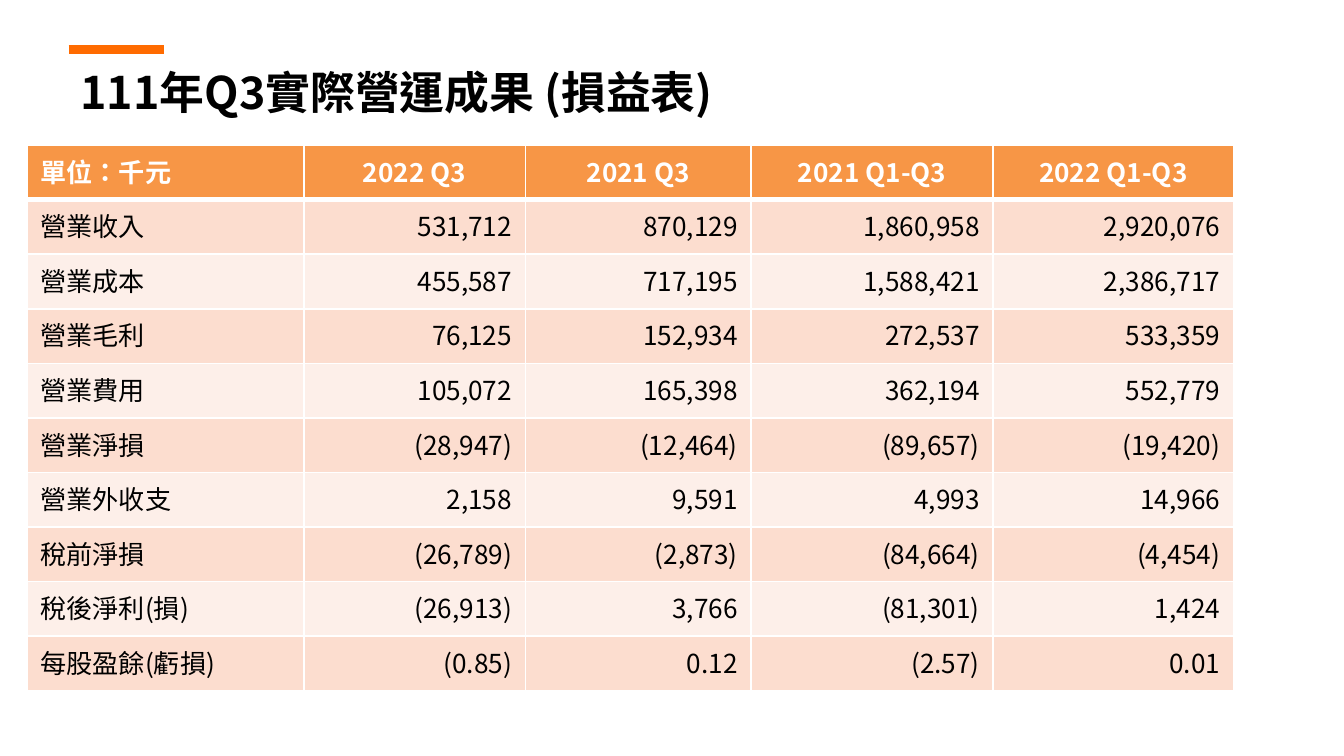
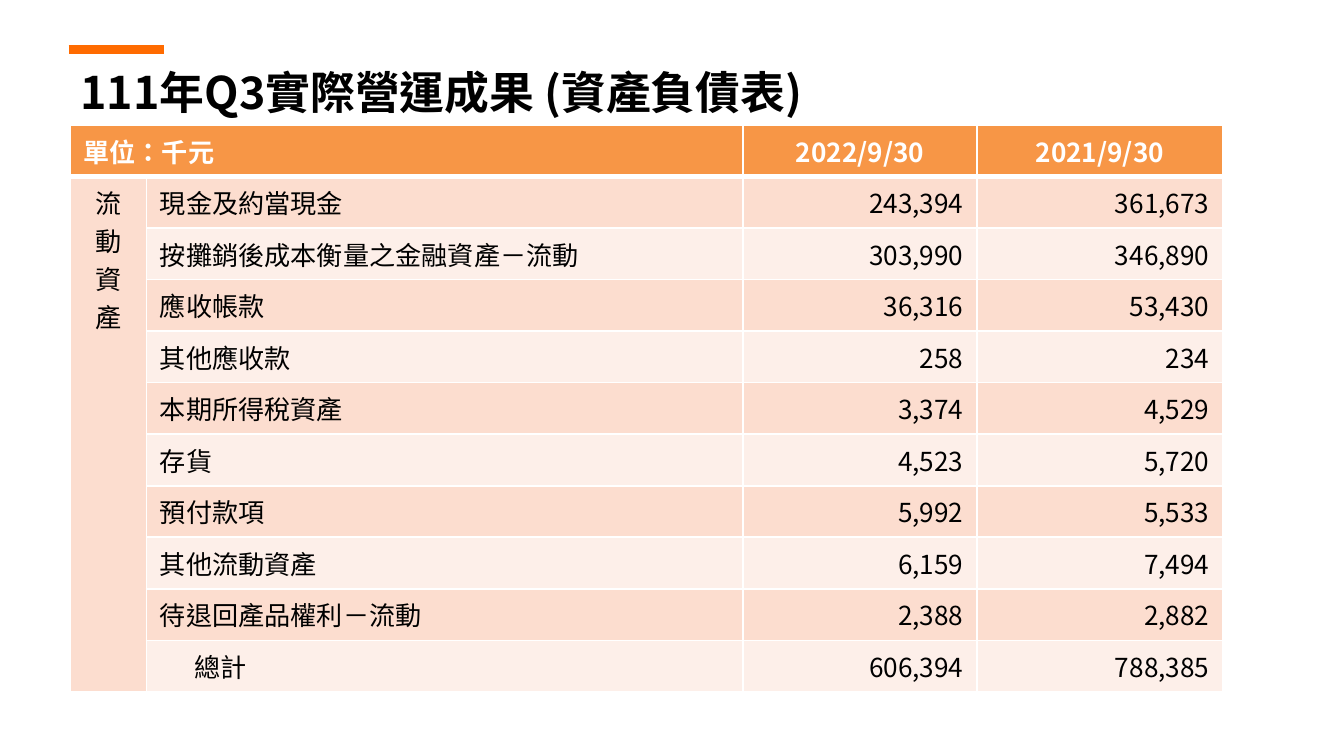
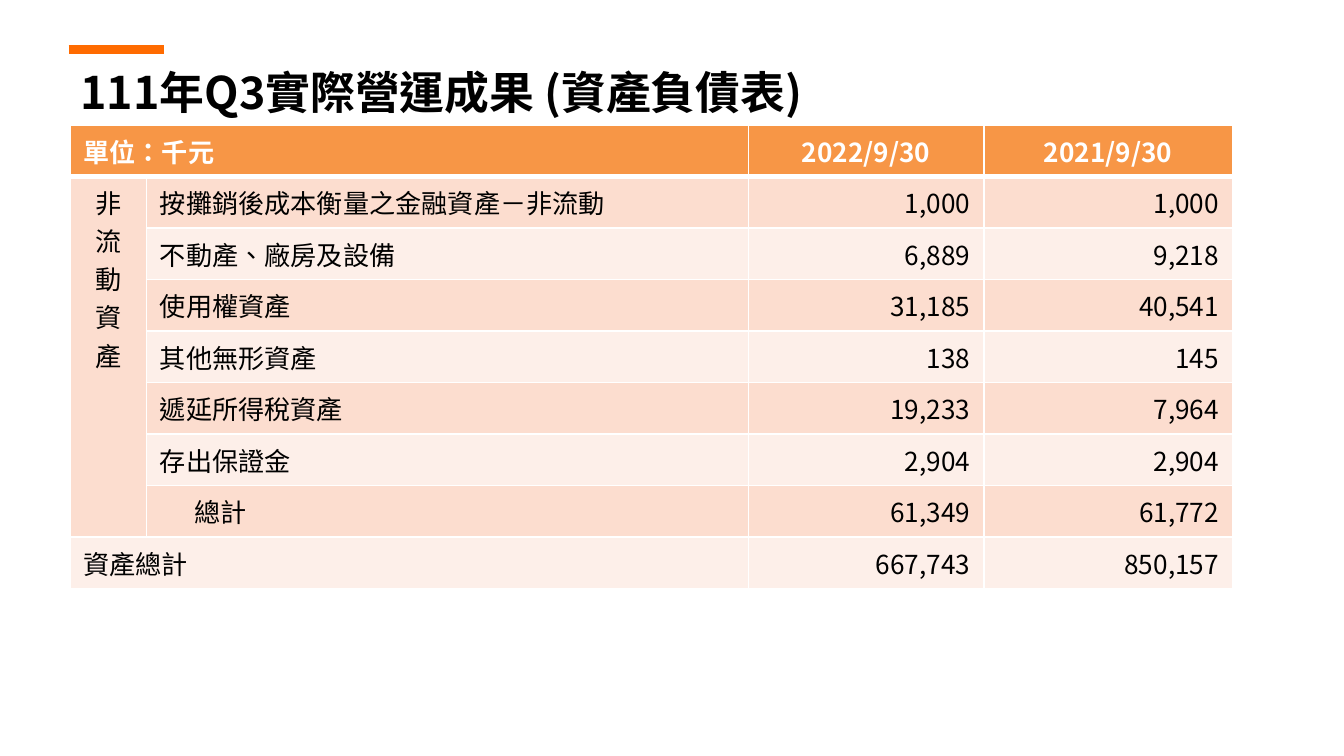
import pptx
import pptx.dml.color
import pptx.enum.shapes
import pptx.enum.text
import pptx.oxml.ns
import pptx.util
from lxml import etree

Inches = pptx.util.Inches
Pt = pptx.util.Pt
ALIGN = pptx.enum.text.PP_ALIGN

FONT = "Noto Sans CJK SC"
LANGUAGE = "zh-TW"
ACCENT = "FF6B00"
HEADER = "F79646"
BANDS = ("FCDDCF", "FDEFE9")
WHITE = "FFFFFF"
BLACK = "000000"
UNIT = "單位：千元"
SUBTOTAL = "總計"
DATES = ("2022/9/30", "2021/9/30")

INCOME = [
    (UNIT, "2022 Q3", "2021 Q3", "2021 Q1-Q3", "2022 Q1-Q3"),
    ("營業收入", "531,712", "870,129", "1,860,958", "2,920,076"),
    ("營業成本", "455,587", "717,195", "1,588,421", "2,386,717"),
    ("營業毛利", "76,125", "152,934", "272,537", "533,359"),
    ("營業費用", "105,072", "165,398", "362,194", "552,779"),
    ("營業淨損", "(28,947)", "(12,464)", "(89,657)", "(19,420)"),
    ("營業外收支", "2,158", "9,591", "4,993", "14,966"),
    ("稅前淨損", "(26,789)", "(2,873)", "(84,664)", "(4,454)"),
    ("稅後淨利(損)", "(26,913)", "3,766", "(81,301)", "1,424"),
    ("每股盈餘(虧損)", "(0.85)", "0.12", "(2.57)", "0.01"),
]
CURRENT_ASSETS = [
    ("現金及約當現金", "243,394", "361,673"),
    ("按攤銷後成本衡量之金融資產－流動", "303,990", "346,890"),
    ("應收帳款", "36,316", "53,430"),
    ("其他應收款", "258", "234"),
    ("本期所得稅資產", "3,374", "4,529"),
    ("存貨", "4,523", "5,720"),
    ("預付款項", "5,992", "5,533"),
    ("其他流動資產", "6,159", "7,494"),
    ("待退回產品權利－流動", "2,388", "2,882"),
    (SUBTOTAL, "606,394", "788,385"),
]
NONCURRENT_ASSETS = [
    ("按攤銷後成本衡量之金融資產－非流動", "1,000", "1,000"),
    ("不動產、廠房及設備", "6,889", "9,218"),
    ("使用權資產", "31,185", "40,541"),
    ("其他無形資產", "138", "145"),
    ("遞延所得稅資產", "19,233", "7,964"),
    ("存出保證金", "2,904", "2,904"),
    (SUBTOTAL, "61,349", "61,772"),
]
ALL_ASSETS = ("資產總計", "667,743", "850,157")


def rgb(value):
    return pptx.dml.color.RGBColor.from_string(value)


def add_child(parent, tag, **attributes):
    return etree.SubElement(parent, pptx.oxml.ns.qn(tag), **attributes)


def format_text(frame, size, color, bold, align):
    for paragraph in frame.paragraphs:
        paragraph.alignment = align
        for run in paragraph.runs:
            run.font.size = Pt(size)
            run.font.bold = bold
            run.font.color.rgb = rgb(color)
            run.font.name = FONT
            run.font._element.set("lang", LANGUAGE)
            add_child(run.font._element, "a:ea", typeface=FONT)


def add_heading(slide, title, left, top):
    bar = slide.shapes.add_connector(
        pptx.enum.shapes.MSO_CONNECTOR.STRAIGHT,
        Inches(left + 0.01), Inches(top), Inches(left + 0.72), Inches(top))
    bar.line.color.rgb = rgb(ACCENT)
    bar.line.width = Pt(4.5)
    add_child(bar._element.spPr, "a:effectLst")

    heading = slide.shapes.add_textbox(
        Inches(left), Inches(top), Inches(9.62), Inches(0.63))
    frame = heading.text_frame
    frame.word_wrap = True
    frame.vertical_anchor = pptx.enum.text.MSO_ANCHOR.MIDDLE
    frame.text = title
    format_text(frame, 24, BLACK, True, ALIGN.LEFT)


def set_borders(cell, top, bottom):
    properties = cell._tc.get_or_add_tcPr()
    for side, width in (("L", 1), ("R", 1), ("T", top), ("B", bottom)):
        border = add_child(properties, f"a:ln{side}", w=str(Pt(width)))
        fill = add_child(border, "a:solidFill")
        add_child(fill, "a:srgbClr", val=WHITE)


def format_cell(cell, row, align):
    is_header = row == 0
    set_borders(cell, 3 if row == 1 else 1, 3 if is_header else 1)
    cell.fill.solid()
    cell.fill.fore_color.rgb = rgb(HEADER if is_header else BANDS[(row - 1) % 2])
    format_text(cell.text_frame, 14, WHITE if is_header else BLACK, is_header, align)


def add_statement(slide, left, top, widths, height, rows, label_columns):
    table = slide.shapes.add_table(
        len(rows), len(widths), Inches(left), Inches(top),
        Inches(sum(widths)), Inches(height)).table
    for column, width in zip(table.columns, widths):
        column.width = Inches(width)
    for r, values in enumerate(rows):
        for c, value in enumerate(values):
            cell = table.cell(r, c)
            cell.text_frame.text = value
            if c < label_columns:
                align = ALIGN.LEFT
            else:
                align = ALIGN.CENTER if r == 0 else ALIGN.RIGHT
            format_cell(cell, r, align)
            if value == SUBTOTAL:
                indent = cell.text_frame.paragraphs[0]._p.get_or_add_pPr()
                indent.set("marL", str(Inches(0.26)))
    return table


def add_assets(slide, left, top, widths, height, group, items, closing=()):
    rows = [(UNIT, "", *DATES)]
    rows += [(group if i == 0 else "", *item) for i, item in enumerate(items)]
    rows += [(label, "", *amounts) for label, *amounts in closing]
    table = add_statement(slide, left, top, widths, height, rows, 2)
    last_item = len(items)
    table.cell(1, 0).merge(table.cell(last_item, 0))
    for r in [0, *range(last_item + 1, len(rows))]:
        table.cell(r, 0).merge(table.cell(r, 1))
    for paragraph in table.cell(1, 0).text_frame.paragraphs:
        paragraph.alignment = ALIGN.CENTER


def add_slide(deck, statement):
    slide = deck.slides.add_slide(deck.slide_layouts[6])
    add_heading(slide, f"111年Q3實際營運成果 ({statement})", 0.5, 0.37)
    return slide


def main():
    deck = pptx.Presentation()
    deck.slide_width = Inches(10)
    deck.slide_height = deck.slide_width * 9 // 16

    add_statement(add_slide(deck, "損益表"), 0.2, 1.08,
                  (2.06, 1.65, 1.68, 1.8, 1.79), 4.06, INCOME, 1)
    add_assets(add_slide(deck, "資產負債表"), 0.52, 0.93,
               (0.57, 4.44, 1.74, 1.83), 4.22, "流\n動\n資\n產", CURRENT_ASSETS)
    add_assets(add_slide(deck, "資產負債表"), 0.52, 0.93,
               (0.57, 4.48, 1.75, 1.85), 3.45, "非\n流動資產",
               NONCURRENT_ASSETS, [ALL_ASSETS])

    deck.save("out.pptx")


if __name__ == "__main__":
    main()
